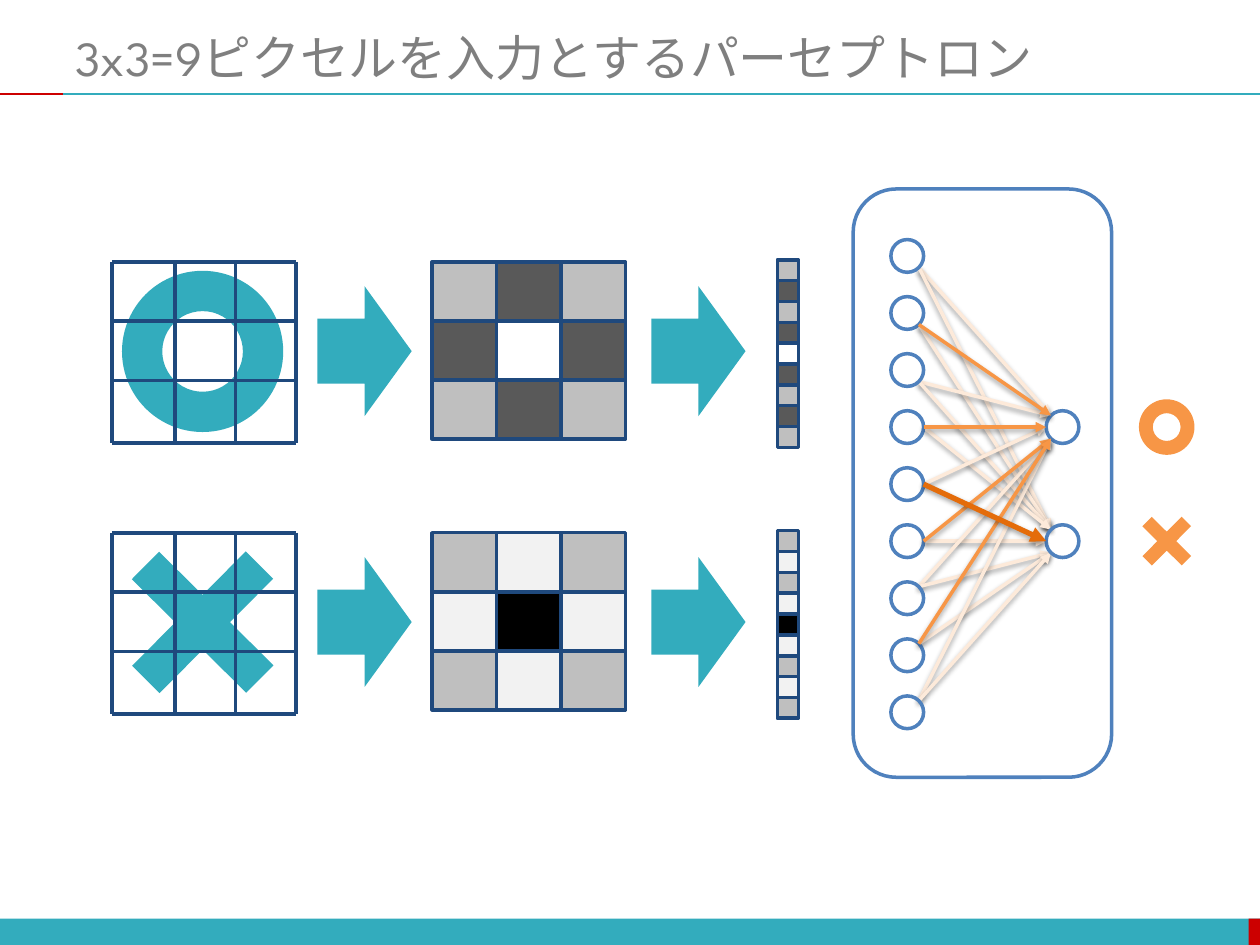
from dataclasses import dataclass
from math import sqrt

import lxml.etree
import pptx
import pptx.dml.color
import pptx.enum.shapes
import pptx.enum.text
import pptx.oxml.ns
import pptx.util

Cm = pptx.util.Cm
Pt = pptx.util.Pt
qn = pptx.oxml.ns.qn
SHAPE = pptx.enum.shapes.MSO_SHAPE
STRAIGHT = pptx.enum.shapes.MSO_CONNECTOR.STRAIGHT


@dataclass(frozen=True)
class Theme:
    teal: str = "33ACBD"
    red: str = "CC0000"
    title: str = "7F7F7F"
    grid: str = "1F497D"
    neuron: str = "4F81BD"
    white: str = "FFFFFF"
    faint: str = "FDEADA"
    orange: str = "F79646"
    strong: str = "E46C0A"
    font: str = "League Spartan"
    title_size: float = 28
    rule: float = 1
    stroke: float = 2
    strong_stroke: float = 3


THEME = Theme()
GREY = {"k": "000000", "d": "595959", "m": "BFBFBF", "l": "F2F2F2", "w": "FFFFFF"}

# Shades of the nine pixels, row by row
CIRCLE_PIXELS = "mdmdwdmdm"
CROSS_PIXELS = "mlmlklmlm"

# (input, output): colour and width of the wires that stand out
ACTIVE_WIRES = {
    (3, 0): (THEME.orange, THEME.stroke),
    (5, 0): (THEME.orange, THEME.stroke),
    (7, 0): (THEME.orange, THEME.stroke),
    (1, 0): (THEME.orange, THEME.stroke),
    (4, 1): (THEME.strong, THEME.strong_stroke),
}


def rgb(value):
    return pptx.dml.color.RGBColor.from_string(value)


def set_all(target, values):
    for name, value in values.items():
        setattr(target, name, value)


def add_block(shapes, kind, box, fill=None, outline=None):
    block = shapes.add_shape(kind, *(Cm(v) for v in box))
    block.shadow.inherit = False
    if fill:
        block.fill.solid()
        block.fill.fore_color.rgb = rgb(fill)
    else:
        block.fill.background()
    if outline:
        block.line.color.rgb = rgb(outline)
        block.line.width = Pt(THEME.stroke)
    else:
        block.line.fill.background()
    return block


def add_line(shapes, start, end, color, width):
    line = shapes.add_connector(STRAIGHT, *(Cm(v) for v in (*start, *end)))
    line.line.color.rgb = rgb(color)
    line.line.width = Pt(width)
    effects = lxml.etree.SubElement(line._element.spPr, qn("a:effectLst"))
    return line, effects


def add_wire(shapes, start, end, color, width):
    """Arrow with a soft shadow below it."""
    wire, effects = add_line(shapes, start, end, color, width)
    lxml.etree.SubElement(wire.line._get_or_add_ln(), qn("a:tailEnd"), type="triangle")
    shadow = lxml.etree.SubElement(effects, qn("a:outerShdw"), blurRad="40000",
                                   dist="20000", dir="5400000", rotWithShape="0")
    black = lxml.etree.SubElement(shadow, qn("a:srgbClr"), val="000000")
    lxml.etree.SubElement(black, qn("a:alpha"), val="38000")


def add_circle_mark(shapes, box, color):
    add_block(shapes, SHAPE.DONUT, box, color)


def add_cross_mark(shapes, box, color):
    cross = add_block(shapes, SHAPE.CROSS, box, color)
    cross.adjustments[0] = 0.38
    cross.rotation = 44.8


def add_frame(slide, width, height):
    """Footer band and the rule under the title."""
    band_top, red_width, rule_y, red_end = height - 0.53, 0.23, 1.89, 1.27
    add_block(slide.shapes, SHAPE.RECTANGLE, (0, band_top, width, 0.53), THEME.teal)
    add_block(slide.shapes, SHAPE.RECTANGLE,
              (width - red_width, band_top, red_width, 0.53), THEME.red)
    for start, end, color in ((red_end, width, THEME.teal), (0, red_end, THEME.red)):
        add_line(slide.shapes, (start, rule_y), (end, rule_y), color, THEME.rule)


def add_title(slide, box, wording):
    title = slide.shapes.title
    set_all(title, dict(zip(("left", "top", "width", "height"), map(Cm, box))))
    frame = title.text_frame
    frame.text = wording
    set_all(frame, {"vertical_anchor": pptx.enum.text.MSO_ANCHOR.MIDDLE,
                    "auto_size": pptx.enum.text.MSO_AUTO_SIZE.NONE,
                    "word_wrap": True})
    frame.paragraphs[0].alignment = pptx.enum.text.PP_ALIGN.LEFT
    font = frame.paragraphs[0].runs[0].font
    set_all(font, {"name": THEME.font, "size": Pt(THEME.title_size)})
    font.color.rgb = rgb(THEME.title)


def add_ruled_grid(slide, left, top):
    """Lines that cut the drawn symbol into 3x3 parts."""
    columns, rows = (0, 1.27, 2.49, 3.71), (0, 1.19, 2.39, 3.65)
    grid = slide.shapes.add_group_shape().shapes
    for x in columns:
        add_line(grid, (left + x, top), (left + x, top + rows[-1]),
                 THEME.grid, THEME.stroke)
    for y in rows:
        add_line(grid, (left, top + y), (left + columns[-1], top + y),
                 THEME.grid, THEME.stroke)


def add_pixels(slide, left, top, pixels, columns, pitch):
    """Grey cells, filled row by row."""
    cells = slide.shapes.add_group_shape().shapes
    for i, shade in enumerate(pixels):
        row, column = divmod(i, columns)
        add_block(cells, SHAPE.RECTANGLE,
                  (left + column * pitch[0], top + row * pitch[1], *pitch),
                  GREY[shade], THEME.grid)


def add_conversion(slide, left, top, add_mark, pixels):
    """Symbol, its 3x3 pixels, and the same pixels as a column."""
    add_mark(slide.shapes, (left + 0.2, top + 0.18, 3.25, 3.25), THEME.teal)
    add_ruled_grid(slide, left, top)
    add_pixels(slide, left + 6.45, top, pixels, 3, (1.3, 1.19))
    add_pixels(slide, left + 13.41, top - 0.04, pixels, 1, (0.43, 0.42))
    for x in (4.14, 10.87):
        add_block(slide.shapes, SHAPE.RIGHT_ARROW,
                  (left + x, top + 0.49, 1.9, 2.62), THEME.teal)


def add_perceptron(slide, left, top, width, height):
    """Nine inputs wired to two outputs, with the answers at the right."""
    radius, pitch = 0.33, 1.15
    diagonal = radius / sqrt(2)
    input_x, output_x, first_y = left + 1.09, left + 4.22, top + 1.35
    output_rows = (3, 5)
    inputs = [(input_x, first_y + i * pitch) for i in range(9)]
    outputs = [(output_x, first_y + row * pitch) for row in output_rows]

    def wire_ends(i, o):
        """Leave the input towards the middle, meet the output on the near side."""
        (x1, y1), (x2, y2) = inputs[i], outputs[o]
        side = 1 if i < 3 else -1 if i > 5 else 0
        start = (x1 + (diagonal if side else radius), y1 + side * diagonal)
        gap = i - output_rows[o]
        level = (-1, 0) if o == 1 else (0, 1)
        near = 0 if gap in level else 1 if gap > 0 else -1
        end = (x2 - (diagonal if near else radius), y2 + near * diagonal)
        return start, end

    network = slide.shapes.add_group_shape().shapes
    add_block(network, SHAPE.ROUNDED_RECTANGLE, (left, top, width, height),
              THEME.white, THEME.neuron)
    for i in range(len(inputs)):
        for o in range(len(outputs)):
            if (i, o) not in ACTIVE_WIRES:
                add_wire(network, *wire_ends(i, o), THEME.faint, THEME.stroke)
    for x, y in inputs + outputs:
        add_block(network, SHAPE.OVAL, (x - radius, y - radius, 2 * radius, 2 * radius),
                  outline=THEME.neuron)
    for (i, o), (color, stroke) in ACTIVE_WIRES.items():
        add_wire(network, *wire_ends(i, o), color, stroke)

    # Answers beside the outputs
    size = 1.12
    for add_mark, (_, y) in zip((add_circle_mark, add_cross_mark), outputs):
        add_mark(slide.shapes, (left + width + 0.55, y - size / 2, size, size),
                 THEME.orange)


def main():
    width, height = 25.4, 19.05
    deck = pptx.Presentation()
    set_all(deck, {"slide_width": Cm(width), "slide_height": Cm(height)})
    slide = deck.slides.add_slide(deck.slide_layouts[5])
    add_frame(slide, width, height)
    add_title(slide, (1.27, 0.56, 24.13, 1.17), "3x3=9ピクセルを入力とするパーセプトロン")
    add_conversion(slide, 2.26, 5.28, add_circle_mark, CIRCLE_PIXELS)
    add_conversion(slide, 2.26, 10.74, add_cross_mark, CROSS_PIXELS)
    add_perceptron(slide, 17.2, 3.81, 5.21, 11.86)
    deck.save("out.pptx")


if __name__ == "__main__":
    main()
